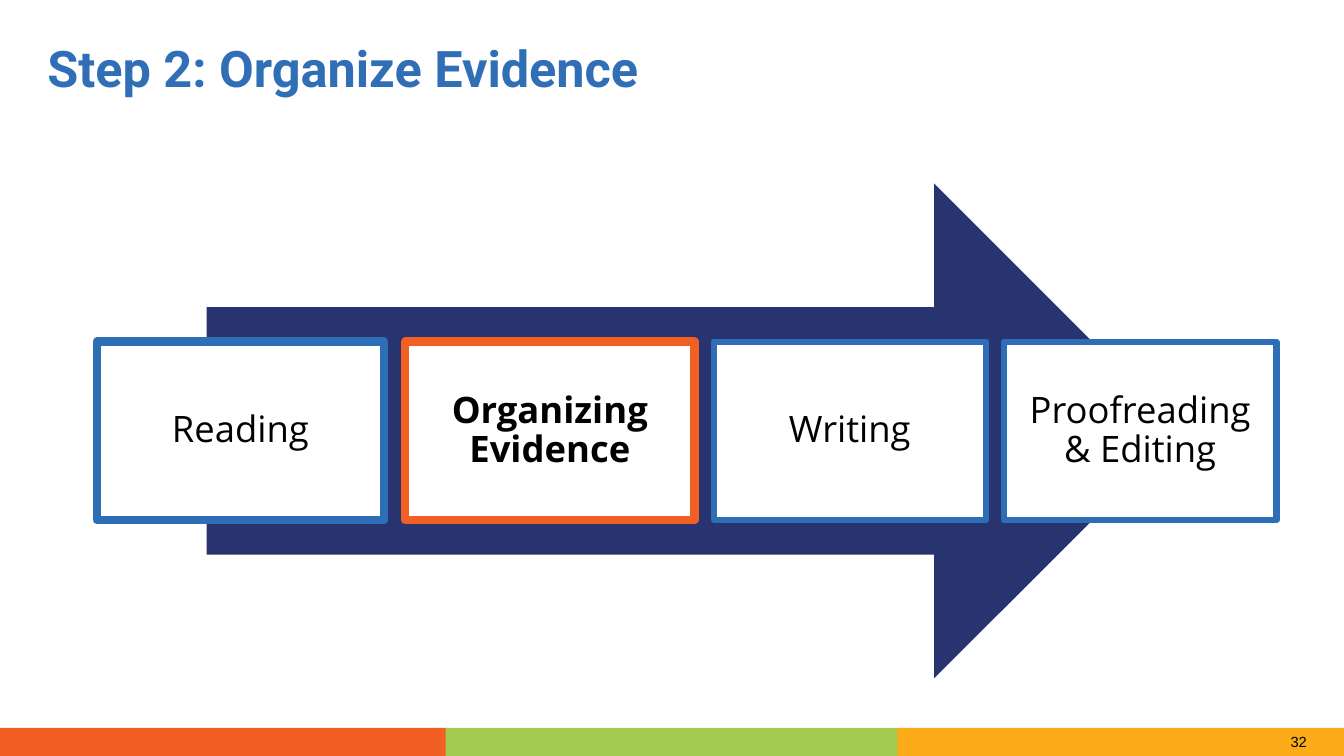
from lxml import etree
from pptx import Presentation
from pptx import util as u
from pptx.dml.color import RGBColor
from pptx.enum import shapes, text
from pptx.oxml.ns import qn

COLORS = {
    "title": "306EB6", "blue": "2E6EB7", "navy": "27346F", "orange": "F15F22",
    "green": "A2CB4F", "yellow": "FBAC18", "white": "FFFFFF", "black": "000000",
}


def rgb(name):
    return RGBColor.from_string(COLORS[name])


def write(tf, words, font="Open Sans", size=26, color="black", bold=False,
          align=text.PP_ALIGN.CENTER, inset=0.11, spacing=0.9):
    tf.word_wrap = True
    tf.auto_size = text.MSO_AUTO_SIZE.NONE
    tf.vertical_anchor = text.MSO_ANCHOR.MIDDLE
    tf.margin_left = tf.margin_right = u.Inches(inset)
    tf.margin_top = tf.margin_bottom = u.Inches(inset)
    p = tf.paragraphs[0]
    p.alignment, p.line_spacing = align, spacing
    p.space_before = u.Pt(0)
    r = p.add_run()
    r.text = words
    r.font.name, r.font.size, r.font.bold = font, u.Pt(size), bold
    r.font.color.rgb = rgb(color)


class SlideBuilder:
    def __init__(self, prs):
        self.s = prs.slides.add_slide(prs.slide_layouts[5])

    def title(self, words, *box):
        sp = self.s.shapes.title
        sp.left, sp.top, sp.width, sp.height = map(u.Inches, box)
        write(sp.text_frame, words, font="Roboto", size=36, color="title",
              bold=True, align=text.PP_ALIGN.LEFT, inset=0)

    def shape(self, kind, fill, *box):
        sp = self.s.shapes.add_shape(kind, *map(u.Inches, box))
        sp.shadow.inherit = False
        sp.fill.solid()
        sp.fill.fore_color.rgb = rgb(fill)
        sp.line.fill.background()
        return sp

    def step(self, words, left, width, border, weight, bold):
        sp = self.shape(shapes.MSO_SHAPE.RECTANGLE, "white", left, 3.39, width, 1.77)
        sp.line.color.rgb = rgb(border)
        sp.line.width = u.Pt(weight)
        etree.SubElement(sp.line._get_or_add_ln(), qn("a:round"))
        write(sp.text_frame, words, bold=bold)

    def label(self, words, *box, **style):
        sp = self.s.shapes.add_textbox(*map(u.Inches, box))
        write(sp.text_frame, words, **style)


def main():
    prs = Presentation()
    prs.slide_width, prs.slide_height = u.Inches(13.33), u.Inches(7.5)
    b = SlideBuilder(prs)

    # Footer band and slide number
    for fill, left, width in (("yellow", 8.89, 4.44), ("orange", 0, 4.44),
                              ("green", 4.42, 4.48)):
        b.shape(shapes.MSO_SHAPE.RECTANGLE, fill, left, 7.22, width, 0.28)
    b.label("32", 12.69, 7.22, 0.38, 0.28, font="Arial", size=10.5, inset=0, spacing=1)

    # Title
    b.title("Step 2: Organize Evidence", 0.47, 0.47, 12.4, 0.47)

    # Process arrow with its four steps, the current one highlighted
    b.shape(shapes.MSO_SHAPE.RIGHT_ARROW, "navy", 2.05, 1.82, 9.67, 4.91)
    for words, left, width, border, weight, bold in (
        ("Reading", 0.96, 2.85, "blue", 6, False),
        ("Organizing Evidence", 4.02, 2.87, "orange", 6, True),
        ("Writing", 7.08, 2.7, "blue", 4.5, False),
        ("Proofreading & Editing", 9.96, 2.7, "blue", 4.5, False),
    ):
        b.step(words, left, width, border, weight, bold)

    prs.save("out.pptx")


if __name__ == "__main__":
    main()
